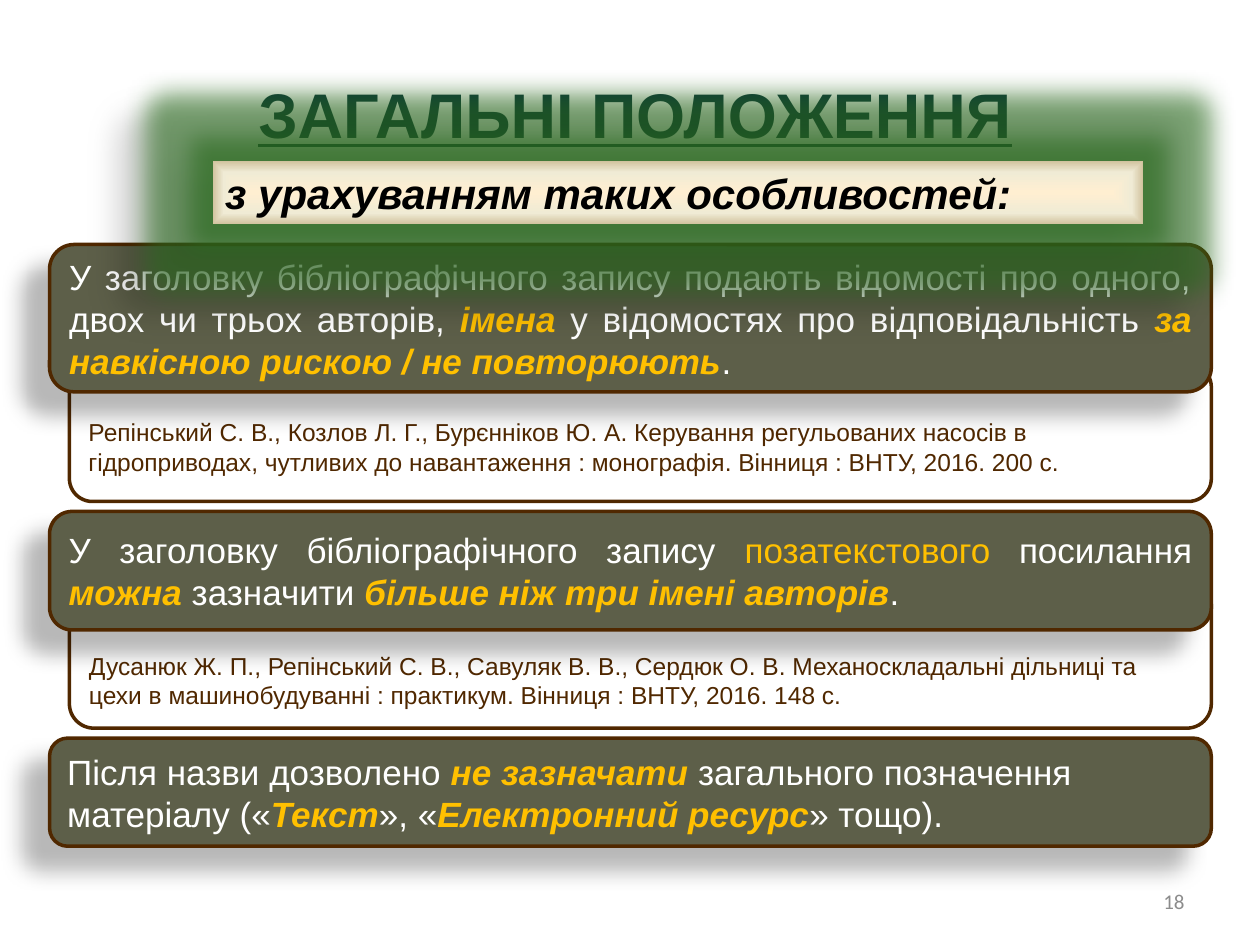
from pptx import Presentation
from pptx.dml.color import RGBColor
from pptx.enum import shapes, text
from pptx.oxml import parse_xml
from pptx.oxml.ns import nsdecls, qn
from pptx.util import Cm, Pt

COLORS = {
    "title": "0A353C", "card": "5D5F49", "brown": "502800", "accent": "FFC000",
    "white": "FFFFFF", "black": "000000", "number": "8C8C8C", "glow": "2A6A1E",
}
BANNER_STOPS = [(0, "FFEFD1"), (65, "F0EBD5"), (100, "D1C39F")]
LEFT, ALIGN, ANCHOR = Cm(1), text.PP_ALIGN, text.MSO_ANCHOR
CARD_WIDTH = Cm(23.42)
EXAMPLE_INDENT = Cm(0.4)


def rgb(name):
    return RGBColor.from_string(COLORS[name])


def color_xml(name, alpha):
    return (f'<a:srgbClr val="{COLORS[name]}">'
            f'<a:alpha val="{alpha * 1000}"/></a:srgbClr>')


class Deck:
    def __init__(self):
        self.prs = Presentation()
        self.prs.slide_width, self.prs.slide_height = Cm(25.4), Cm(19.05)
        self.slide = self.prs.slides.add_slide(self.prs.slide_layouts[5])

    def set_text(self, frame, parts, size, color, align=ALIGN.LEFT, font="Arial",
                 anchor=ANCHOR.MIDDLE):
        """Fill one paragraph; each part is plain text or (text, is_strong) in accent."""
        frame.word_wrap = True
        frame.auto_size = text.MSO_AUTO_SIZE.NONE
        frame.vertical_anchor = anchor
        paragraph = frame.paragraphs[0]
        paragraph.alignment = align
        paragraph.font.name, paragraph.font.size = font, Pt(size)
        paragraph.font.color.rgb = rgb(color)
        for part in parts:
            run = paragraph.add_run()
            if isinstance(part, str):
                run.text = part
                continue
            run.text, strong = part
            run.font.color.rgb = rgb("accent")
            if strong:
                run.font.bold = run.font.italic = True
        return paragraph

    def effects(self, shape, glow=""):
        """Give a shape the soft lower-left shadow, with an optional glow."""
        shape._element.spPr.append(parse_xml(
            f'<a:effectLst {nsdecls("a")}>{glow}'
            '<a:outerShdw blurRad="149860" dist="250190" dir="8460000" '
            f'algn="ctr" rotWithShape="0">{color_xml("black", 28)}'
            '</a:outerShdw></a:effectLst>'))

    def panel(self, left, top, width, height, fill, corner=0.167):
        shape = self.slide.shapes.add_shape(
            shapes.MSO_SHAPE.ROUNDED_RECTANGLE, left, top, width, height)
        shape.adjustments[0] = corner
        shape.fill.solid()
        shape.fill.fore_color.rgb = rgb(fill)
        shape.line.color.rgb = rgb("brown")
        shape.line.width = Pt(2)
        return shape

    def title(self, words):
        title = self.slide.shapes.title
        title.left, title.top, title.width, title.height = (
            Cm(1.19), Cm(1.4), Cm(23.22), Cm(1.8))
        line = self.set_text(title.text_frame, [words], 36, "title", ALIGN.CENTER,
                             anchor=ANCHOR.TOP)
        line.font.bold = line.font.underline = True

    def rule(self, top, height, parts, align=ALIGN.JUSTIFY, corner=0.167):
        card = self.panel(LEFT, Cm(top), CARD_WIDTH, Cm(height), "card", corner)
        self.effects(card)
        self.set_text(card.text_frame, parts, 20, "white", align)

    def example(self, top, height, words, margin_top, anchor):
        box = self.panel(LEFT + EXAMPLE_INDENT, Cm(top), CARD_WIDTH - EXAMPLE_INDENT,
                         Cm(height), "white")
        box.shadow.inherit = False
        box.text_frame.margin_top = Cm(margin_top)
        self.set_text(box.text_frame, [words], 14, "brown", anchor=anchor)

    def banner(self, words):
        banner = self.slide.shapes.add_shape(
            shapes.MSO_SHAPE.RECTANGLE, Cm(4.29), Cm(3.25), Cm(18.75), Cm(1.27))
        banner.line.fill.background()
        banner.fill.background()
        props = banner._element.spPr
        stops = "".join(f'<a:gs pos="{pos * 1000}"><a:srgbClr val="{color}"/></a:gs>'
                        for pos, color in BANNER_STOPS)
        props.replace(props.find(qn("a:noFill")), parse_xml(
            f'<a:gradFill {nsdecls("a")} rotWithShape="1"><a:gsLst>{stops}</a:gsLst>'
            '<a:path path="shape"><a:fillToRect l="50000" t="50000" r="50000" '
            'b="50000"/></a:path></a:gradFill>'))
        self.effects(banner, f'<a:glow rad="{Pt(27)}">{color_xml("glow", 60)}</a:glow>')
        line = self.set_text(banner.text_frame, [words], 24, "black", anchor=ANCHOR.TOP)
        line.font.bold = line.font.italic = True

    def number(self, value):
        box = self.slide.shapes.add_textbox(Cm(18.21), Cm(17.65), Cm(5.92), Cm(1.02))
        self.set_text(box.text_frame, [value], 12, "number", ALIGN.RIGHT, "Calibri")


def main():
    deck = Deck()
    deck.number("18")
    deck.title("ЗАГАЛЬНІ ПОЛОЖЕННЯ")
    deck.example(
        7.34, 2.77,
        "Репінський С. В., Козлов Л. Г., Бурєнніков Ю. А. Керування регульованих "
        "насосів в гідроприводах, чутливих до навантаження : монографія. "
        "Вінниця : ВНТУ, 2016. 200 с.", 0.68, ANCHOR.MIDDLE)
    deck.rule(4.93, 2.97, [
        "У заголовку бібліографічного запису подають відомості про одного, двох чи "
        "трьох авторів, ", ("імена", True), " у відомостях про відповідальність ",
        ("за навкісною рискою / не повторюють", True), "."])
    deck.example(
        11.71, 2.97,
        "Дусанюк Ж. П., Репінський С. В., Савуляк В. В., Сердюк О. В. "
        "Механоскладальні дільниці та цехи в машинобудуванні : практикум. "
        "Вінниця : ВНТУ, 2016. 148 с.", 1.27, ANCHOR.TOP)
    deck.rule(10.31, 2.39, [
        "У заголовку бібліографічного запису ", ("позатекстового", False),
        " посилання ", ("можна ", True), "зазначити ",
        ("більше ніж три імені авторів", True), "."], corner=0.19)
    deck.rule(14.88, 2.18, [
        "Після назви дозволено ", ("не зазначати ", True),
        "загального позначення матеріалу («", ("Текст", True), "», «",
        ("Електронний ресурс", True), "» тощо)."], ALIGN.LEFT)
    deck.banner("з урахуванням таких особливостей:")
    deck.prs.save("out.pptx")


if __name__ == "__main__":
    main()
